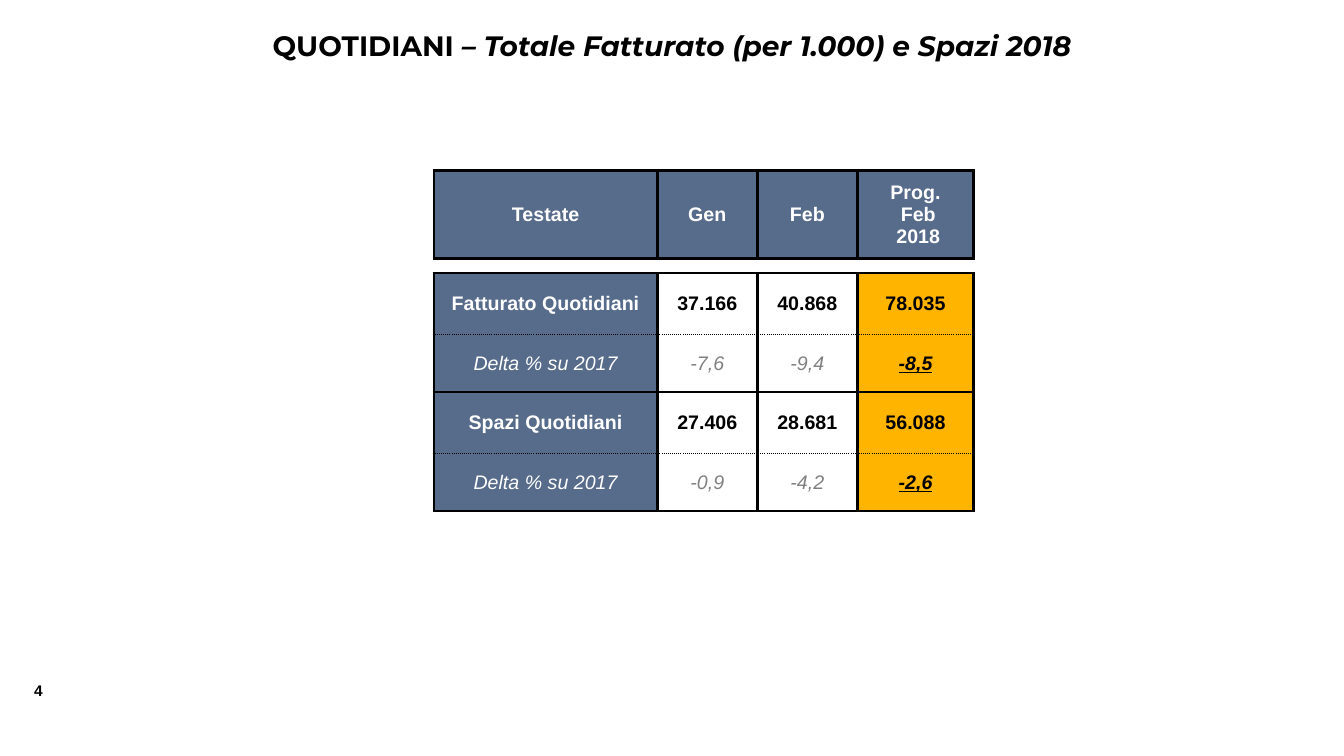
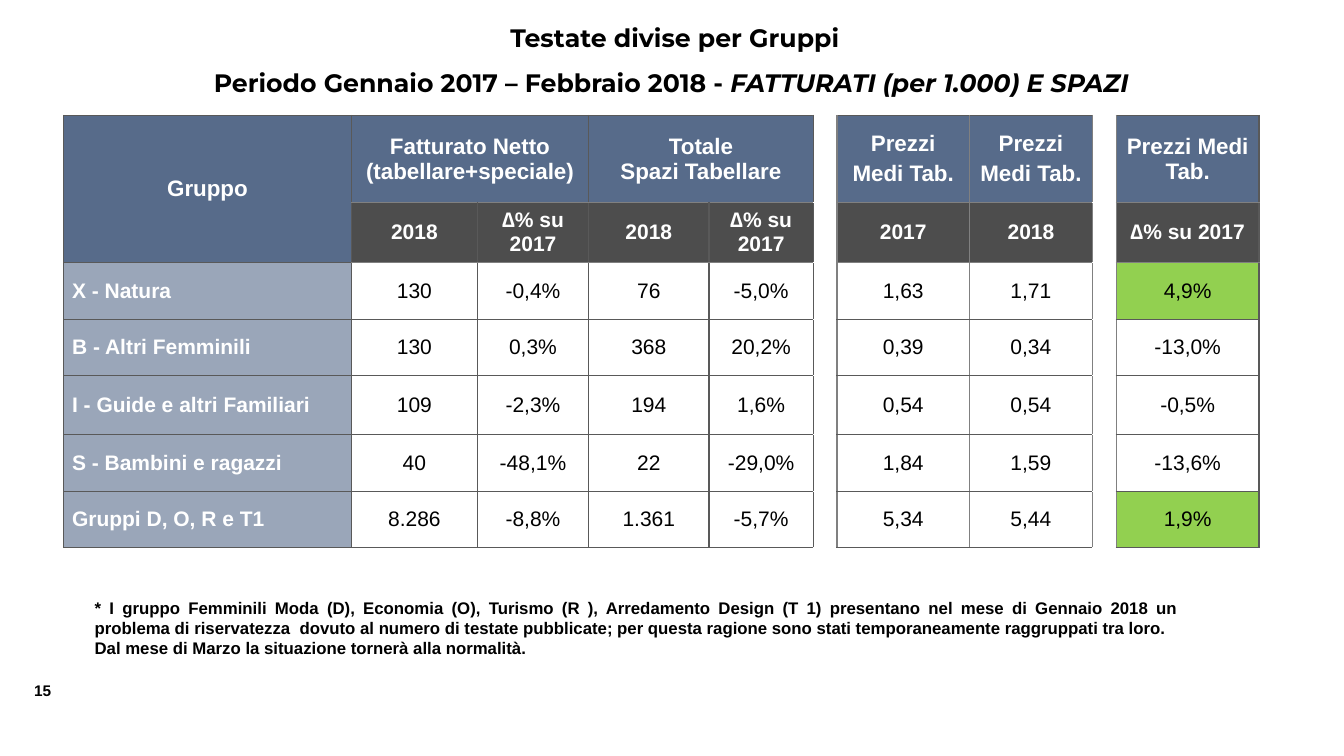
from lxml.etree import SubElement
from pptx import Presentation
from pptx.dml.color import RGBColor
from pptx.enum.text import MSO_ANCHOR, MSO_AUTO_SIZE, PP_ALIGN
from pptx.oxml.ns import qn
from pptx.util import Pt

# Shared style
BLACK = RGBColor(0x00, 0x00, 0x00)
WHITE = RGBColor(0xFF, 0xFF, 0xFF)
BLUE = RGBColor(0x57, 0x6B, 0x8A)
LIGHT_BLUE = RGBColor(0x9A, 0xA6, 0xB9)
CHARCOAL = RGBColor(0x4D, 0x4D, 0x4D)
DARK_GRAY = RGBColor(0x59, 0x59, 0x59)
GRAY = RGBColor(0x80, 0x80, 0x80)
AMBER = RGBColor(0xFF, 0xB4, 0x00)
GREEN = RGBColor(0x92, 0xD0, 0x50)
BODY_FONT = "Arial"
TITLE_FONT = "Montserrat"
WIDE_MARGINS = (7.2, 3.6, 7.2, 3.6)
NO_MARGINS = (0, 0, 0, 0)
LABEL_MARGINS = (6, 0, 0, 0)

# Slide 1: totals
TOTALS_TITLE = [[("QUOTIDIANI ", False),
                 ("– Totale Fatturato (per 1.000) e Spazi 2018", True)]]
TOTALS_ROWS = [
    ["Testate", "Gen", "Feb", "Prog.\n Feb\n 2018"],
    ["", "", "", ""],
    ["Fatturato Quotidiani", "37.166", "40.868", "78.035"],
    ["Delta % su 2017", "-7,6", "-9,4", "-8,5"],
    ["Spazi Quotidiani", "27.406", "28.681", "56.088"],
    ["Delta % su 2017", "-0,9", "-4,2", "-2,6"],
]
TOTALS_WIDTHS = [159.5, 71.5, 71.5, 83]
TOTALS_HEIGHTS = [62.5, 10.5, 44, 41, 44, 41]
TOTALS_GAP_ROW = 1
THICK, THIN, DOTTED = (BLACK, 2.25, "solid"), (BLACK, 1, "solid"), (BLACK, 1, "sysDot")
TOTALS_RULES = [THICK, THICK, THICK, DOTTED, THIN, DOTTED, THICK]

# Slide 2: groups
GROUPS_TITLE = [
    [(" Testate divise per Gruppi", False)],
    [("Periodo Gennaio 2017 – Febbraio 2018 - ", False),
     ("FATTURATI (per 1.000) E SPAZI", True)],
]
PRICES = "Prezzi\nMedi Tab."
DELTA = "∆% su 2017"
GROUPS_ROWS = [
    ["Gruppo", "Fatturato Netto (tabellare+speciale)", "", "Totale\nSpazi Tabellare", "",
     "", PRICES, PRICES, "", "Prezzi Medi Tab."],
    ["", "2018", DELTA, "2018", DELTA, "", "2017", "2018", "", DELTA],
    ["X - Natura", "130", "-0,4%", "76", "-5,0%", "", "1,63", "1,71", "", "4,9%"],
    ["B - Altri Femminili", "130", "0,3%", "368", "20,2%", "", "0,39", "0,34", "", "-13,0%"],
    ["I - Guide e altri Familiari", "109", "-2,3%", "194", "1,6%", "", "0,54", "0,54", "",
     "-0,5%"],
    ["S - Bambini e ragazzi", "40", "-48,1%", "22", "-29,0%", "", "1,84", "1,59", "", "-13,6%"],
    ["Gruppi D, O, R e T1", "8.286", "-8,8%", "1.361", "-5,7%", "", "5,34", "5,44", "", "1,9%"],
]
GROUPS_WIDTHS = [205.5, 90, 79.5, 86, 74.5, 17, 94.5, 88, 17, 102]
GROUPS_HEIGHTS = [62, 43, 40.5, 40.5, 42, 40.5, 40.5]
GROUPS_GAPS = (5, 8)
GROUPS_MERGES = [((0, 0), (1, 0)), ((0, 1), (0, 2)), ((0, 3), (0, 4))]
FOOTNOTE = [
    "* I gruppo Femminili Moda (D), Economia (O), Turismo (R ), Arredamento Design (T 1) "
    "presentano nel mese di Gennaio 2018 un problema di riservatezza  dovuto al numero di "
    "testate pubblicate; per questa ragione sono stati temporaneamente raggruppati tra loro. ",
    "Dal mese di Marzo la situazione tornerà alla normalità.",
]


def add_run(paragraph, text, size, color=BLACK, name=BODY_FONT,
            bold=True, italic=False, underline=False):
    run = paragraph.add_run()
    run.text = text
    font = run.font
    font.name, font.size, font.color.rgb = name, Pt(size), color
    font.bold, font.italic, font.underline = bold, italic, underline


def nth_paragraph(frame, index):
    return frame.add_paragraph() if index else frame.paragraphs[0]


def set_title(slide, lines, box, size, anchor, line_spacing):
    title = slide.shapes.title
    title.left, title.top, title.width, title.height = map(Pt, box)
    frame = title.text_frame
    frame.auto_size, frame.word_wrap = MSO_AUTO_SIZE.NONE, True
    frame.vertical_anchor = anchor
    for index, runs in enumerate(lines):
        paragraph = nth_paragraph(frame, index)
        paragraph.alignment, paragraph.line_spacing = PP_ALIGN.CENTER, line_spacing
        for text, italic in runs:
            add_run(paragraph, text, size, name=TITLE_FONT, italic=italic)


def add_text(slide, lines, box, size, alignment, wrap=True):
    frame = slide.shapes.add_textbox(*map(Pt, box)).text_frame
    frame.word_wrap = wrap
    for index, text in enumerate(lines):
        paragraph = nth_paragraph(frame, index)
        paragraph.alignment = alignment
        add_run(paragraph, text, size)


def add_page_number(slide, number):
    add_text(slide, [number], (17.3, 483, 30, 21), 11, PP_ALIGN.LEFT, wrap=False)


def set_borders(cell, edges):
    """Edges come as left, right, top, bottom; None leaves an edge open."""
    properties = cell._tc.get_or_add_tcPr()
    for side, edge in zip("LRTB", edges):
        line = SubElement(properties, qn(f"a:ln{side}"))
        if edge is None:
            SubElement(line, qn("a:noFill"))
            continue
        color, width, dash = edge
        line.set("w", str(int(Pt(width))))
        fill = SubElement(line, qn("a:solidFill"))
        SubElement(fill, qn("a:srgbClr"), val=str(color))
        SubElement(line, qn("a:prstDash"), val=dash)


def fill_cell(cell, text, fill, margins, font, alignment=PP_ALIGN.CENTER, gap=0):
    if fill is None:
        cell.fill.background()
    else:
        cell.fill.solid()
        cell.fill.fore_color.rgb = fill
    cell.margin_left, cell.margin_top, cell.margin_right, cell.margin_bottom = map(Pt, margins)
    cell.vertical_anchor = MSO_ANCHOR.MIDDLE
    if not text:
        SubElement(cell.text_frame.paragraphs[0]._p, qn("a:endParaRPr"), sz="100")
        return
    for index, line in enumerate(text.split("\n")):
        paragraph = nth_paragraph(cell.text_frame, index)
        paragraph.alignment = alignment
        if index and gap:
            paragraph.space_before = Pt(gap)
        add_run(paragraph, line, **font)


def add_grid(slide, rows, left, top, widths, heights, style, vertical, horizontal, merges=()):
    """vertical(row, boundary) and horizontal(boundary, column) give the grid lines."""
    frame = slide.shapes.add_table(len(heights), len(widths), Pt(left), Pt(top),
                                   Pt(sum(widths)), Pt(sum(heights)))
    table = frame.table
    table.first_row = table.horz_banding = False
    for column, width in zip(table.columns, widths):
        column.width = Pt(width)
    for row, height in zip(table.rows, heights):
        row.height = Pt(height)
    for r, values in enumerate(rows):
        for c, text in enumerate(values):
            cell = table.cell(r, c)
            set_borders(cell, (vertical(r, c), vertical(r, c + 1),
                               horizontal(r, c), horizontal(r + 1, c)))
            fill_cell(cell, text, **style(r, c))
    for first, last in merges:
        table.cell(*first).merge(table.cell(*last))


# Rules for the totals table
def totals_style(row, column):
    delta = row in (3, 5)
    last = column == 3
    font = {"size": 14, "color": WHITE, "bold": not delta, "italic": delta}
    if row == TOTALS_GAP_ROW:
        return {"fill": None, "margins": NO_MARGINS, "font": font}
    if row == 0 or column == 0:
        return {"fill": BLUE, "margins": WIDE_MARGINS, "font": font}
    font.update(color=GRAY if delta and not last else BLACK,
                bold=last or not delta, underline=delta and last)
    return {"fill": AMBER if last else None, "margins": NO_MARGINS, "font": font}


def totals_vertical(row, boundary):
    return None if row == TOTALS_GAP_ROW else THICK


def totals_horizontal(boundary, column):
    return TOTALS_RULES[boundary]


# Rules for the groups table
def groups_style(row, column):
    font = {"size": 16 if row == 0 else 15, "color": WHITE}
    if column in GROUPS_GAPS:
        return {"fill": WHITE, "margins": NO_MARGINS, "font": font}
    if row < 2:
        return {"fill": BLUE if row == 0 or column == 0 else CHARCOAL,
                "margins": WIDE_MARGINS, "font": font, "gap": 3.2 if column > 5 else 0}
    if column == 0:
        return {"fill": LIGHT_BLUE, "margins": LABEL_MARGINS, "font": font,
                "alignment": PP_ALIGN.LEFT}
    font.update(color=BLACK, bold=False)
    rising = column == 9 and not GROUPS_ROWS[row][column].startswith("-")
    return {"fill": GREEN if rising else None, "margins": NO_MARGINS, "font": font}


def groups_vertical(row, boundary):
    return (GRAY if 6 <= boundary <= 9 else DARK_GRAY, 1, "solid")


def groups_horizontal(boundary, column):
    if column in GROUPS_GAPS:
        return (WHITE, 1, "solid")
    return (GRAY if boundary in (1, 2) and column else DARK_GRAY, 1, "solid")


def main():
    presentation = Presentation()
    presentation.slide_width, presentation.slide_height = Pt(960), Pt(540)
    title_only = presentation.slide_layouts[5]

    # Totals
    slide = presentation.slides.add_slide(title_only)
    set_title(slide, TOTALS_TITLE, (120, 16.5, 720, 32), 20, MSO_ANCHOR.MIDDLE, 1)
    add_grid(slide, TOTALS_ROWS, 310, 122, TOTALS_WIDTHS, TOTALS_HEIGHTS,
             totals_style, totals_vertical, totals_horizontal)
    add_page_number(slide, "4")

    # Groups
    slide = presentation.slides.add_slide(title_only)
    set_title(slide, GROUPS_TITLE, (80, 1.5, 799, 77), 18, MSO_ANCHOR.TOP, 1.5)
    add_grid(slide, GROUPS_ROWS, 45.5, 82.5, GROUPS_WIDTHS, GROUPS_HEIGHTS,
             groups_style, groups_vertical, groups_horizontal, GROUPS_MERGES)
    add_text(slide, FOOTNOTE, (60.5, 423.5, 788.5, 51), 12, PP_ALIGN.JUSTIFY)
    add_page_number(slide, "15")

    presentation.save("out.pptx")


if __name__ == "__main__":
    main()
